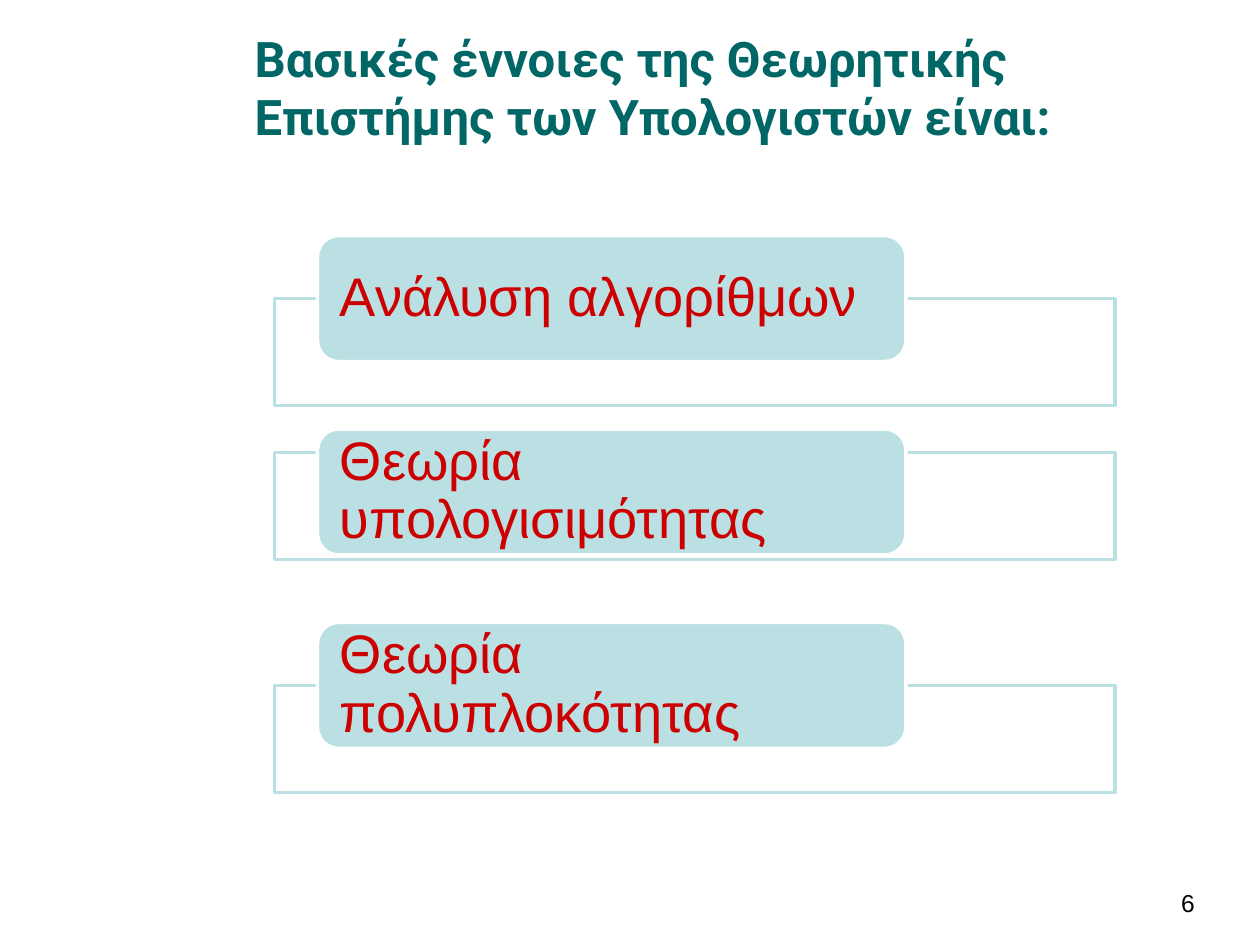
"""Build the slide on the basic concepts of theoretical computer science."""
from dataclasses import dataclass

from pptx import Presentation
from pptx.dml.color import RGBColor
from pptx.enum.shapes import MSO_SHAPE
from pptx.enum.text import MSO_ANCHOR, MSO_AUTO_SIZE, PP_ALIGN
from pptx.util import Inches, Pt

RECTANGLE = MSO_SHAPE.RECTANGLE
ROUNDED = MSO_SHAPE.ROUNDED_RECTANGLE
MIDDLE = MSO_ANCHOR.MIDDLE
NO_AUTOFIT = MSO_AUTO_SIZE.NONE
LEFT = PP_ALIGN.LEFT
RIGHT = PP_ALIGN.RIGHT
TITLE_ONLY = 5

WHITE, PALE_TEAL = "FFFFFF", "BBE0E3"
TITLE_FONT = {"name": "Roboto", "size": Pt(28), "bold": True}
CONCEPT_FONT = {"name": "Arial", "size": Pt(31), "bold": False}
NUMBER_FONT = {"name": "Arial", "size": Pt(14), "bold": False}
TITLE_BOX = {"left": Inches(1.92), "top": Inches(0.33), "width": Inches(7.67), "height": Inches(1.17)}
TITLE_FRAME = {
    "word_wrap": True,
    "auto_size": NO_AUTOFIT,
    "vertical_anchor": MIDDLE,
    "margin_left": Inches(0.1),
    "margin_right": Inches(0.1),
    "margin_top": Inches(0.05),
    "margin_bottom": Inches(0.5),
}
CONCEPT_FRAME = {
    "word_wrap": True,
    "vertical_anchor": MIDDLE,
    "margin_left": Inches(0.13),
    "margin_right": Inches(0.13),
    "margin_top": 0,
    "margin_bottom": 0,
}
LABEL_PITCH = 1.535


@dataclass
class Concept:
    """A concept name and the top of the frame behind its label."""

    name: str
    frame_top: float


CONCEPTS = [
    Concept("Ανάλυση αλγορίθμων", 2.37),
    Concept("Θεωρία υπολογισιμότητας", 3.59),
    Concept("Θεωρία πολυπλοκότητας", 5.44),
]


def color(value: str) -> RGBColor:
    """Turn a hex string into a colour."""
    return RGBColor.from_string(value)


def apply(target, values: dict) -> None:
    """Set each named attribute on the target."""
    for name, value in values.items():
        setattr(target, name, value)


def write(text_frame, text: str, font: dict, font_color: str, alignment=LEFT):
    """Write one formatted paragraph and return it."""
    paragraph = text_frame.paragraphs[0]
    paragraph.alignment = alignment
    run = paragraph.add_run()
    run.text = text
    apply(run.font, font)
    run.font.color.rgb = color(font_color)
    return paragraph


def add_box(slide, preset, left: float, top: float, width: float, height: float, fill: str, line: str):
    """Add a flat outlined shape."""
    shape = slide.shapes.add_shape(preset, Inches(left), Inches(top), Inches(width), Inches(height))
    shape.shadow.inherit = False
    shape.fill.solid()
    shape.fill.fore_color.rgb = color(fill)
    shape.line.color.rgb = color(line)
    shape.line.width = Pt(2)
    return shape


def add_concept(slide, concept: Concept, label_top: float) -> None:
    """Draw a frame and the rounded label over it."""
    add_box(slide, RECTANGLE, 2.18, concept.frame_top, 6.67, 0.85, WHITE, PALE_TEAL)
    label = add_box(slide, ROUNDED, 2.52, label_top, 4.67, 1, PALE_TEAL, WHITE)
    apply(label.text_frame, CONCEPT_FRAME)
    paragraph = write(label.text_frame, concept.name, CONCEPT_FONT, "CC0000")
    paragraph.line_spacing = 0.9


def main() -> None:
    """Build and save the presentation."""
    presentation = Presentation()
    presentation.slide_width = Inches(10)
    presentation.slide_height = Inches(7.5)
    slide = presentation.slides.add_slide(presentation.slide_layouts[TITLE_ONLY])

    title = slide.shapes.title
    apply(title, TITLE_BOX)
    apply(title.text_frame, TITLE_FRAME)
    write(title.text_frame, "Βασικές έννοιες της Θεωρητικής Επιστήμης των Υπολογιστών είναι:", TITLE_FONT, "006666")

    number = slide.shapes.add_textbox(Inches(8.08), Inches(7), Inches(1.5), Inches(0.5))
    number.text_frame.word_wrap = True
    write(number.text_frame, "6", NUMBER_FONT, "000000", RIGHT)

    for index, concept in enumerate(CONCEPTS):
        add_concept(slide, concept, 1.87 + index * LABEL_PITCH)

    presentation.save("out.pptx")


if __name__ == "__main__":
    main()
